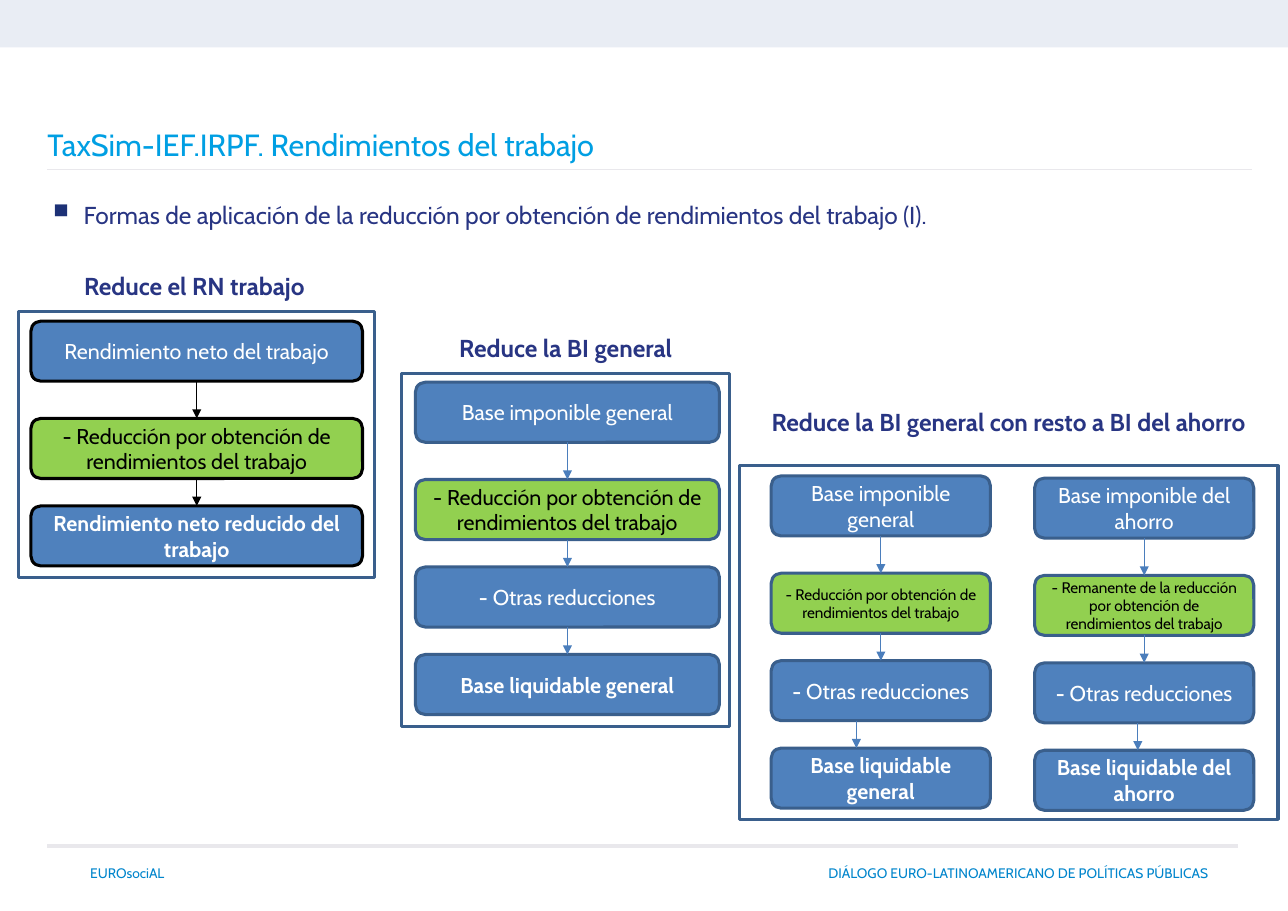
import pptx
import pptx.util
from lxml import etree
from pptx.dml.color import RGBColor
from pptx.enum.shapes import MSO_CONNECTOR, MSO_SHAPE
from pptx.enum.text import MSO_ANCHOR, PP_ALIGN
from pptx.oxml.ns import qn

WIDTH = pptx.util.Inches(11.69)
HEIGHT = pptx.util.Inches(8.27)
FONT = "Cabin"

WHITE = RGBColor(0xFF, 0xFF, 0xFF)
BLACK = RGBColor(0x00, 0x00, 0x00)
PALE = RGBColor(0xE9, 0xED, 0xF4)
GREY = RGBColor(0xE9, 0xE8, 0xEC)
CYAN = RGBColor(0x00, 0x9F, 0xE3)
FOOTER_BLUE = RGBColor(0x00, 0x85, 0xCC)
NAVY = RGBColor(0x28, 0x35, 0x83)
BLUE = RGBColor(0x4F, 0x81, 0xBD)
BORDER = RGBColor(0x3A, 0x5F, 0x8C)
ARROW = RGBColor(0x4B, 0x7E, 0xBC)
GREEN = RGBColor(0x92, 0xD0, 0x50)

# Vertical rhythm of every flow, in percent of the slide height
STEP_HEIGHT = 6.6
STEP_TOPS = (0, 10.68, 20.28, 29.88)

REDUCTION = "- Reducción por obtención de rendimientos del trabajo"
OTHER_REDUCTIONS = [("- ", True), ("Otras reducciones", False)]


def across(percent):
    return round(WIDTH * percent / 100)


def down(percent):
    return round(HEIGHT * percent / 100)


def area(left, top, width, height):
    return across(left), down(top), across(width), down(height)


def write(frame, runs, size, color, align=PP_ALIGN.LEFT):
    """Fill the first paragraph with (text, bold) runs."""
    frame.word_wrap = True
    paragraph = frame.paragraphs[0]
    paragraph.alignment = align
    for text, bold in runs:
        run = paragraph.add_run()
        run.text = text
        run.font.name = FONT
        run.font.size = pptx.util.Pt(size)
        run.font.bold = bold
        run.font.color.rgb = color
    return paragraph


def add_label(slide, place, text, size, color, align, bold=False):
    label = slide.shapes.add_textbox(*area(*place))
    write(label.text_frame, [(text, bold)], size, color, align)
    return label


def add_box(slide, kind, place, fill=None, line=None):
    box = slide.shapes.add_shape(kind, *area(*place))
    box.shadow.inherit = False
    if fill is None:
        box.fill.background()
    else:
        box.fill.solid()
        box.fill.fore_color.rgb = fill
    if line is None:
        box.line.fill.background()
    else:
        box.line.color.rgb = line
        box.line.width = pptx.util.Pt(2)
    return box


def add_line(slide, start, end, color, width):
    line = slide.shapes.add_connector(MSO_CONNECTOR.STRAIGHT, *start, *end)
    line.line.color.rgb = color
    line.line.width = pptx.util.Pt(width)
    etree.SubElement(line._element.spPr, qn("a:effectLst"))
    return line


def add_arrow(slide, upper, lower, color, shift=0):
    """Join two steps; a shifted arrow runs beside the middle."""
    x = upper.left + upper.width // 2 + across(shift)
    arrow = add_line(slide, (x, upper.top + upper.height), (x, lower.top), color, 0.75)
    if not shift:
        arrow.begin_connect(upper, 2)
        arrow.end_connect(lower, 0)
    etree.SubElement(arrow.line._get_or_add_ln(), qn("a:tailEnd"), type="triangle")


def add_flow(slide, left, top, width, steps, border=BORDER, arrow=ARROW,
             green_size=14, last_shift=0):
    """Stack the steps: the second is the green reduction, the last the result."""
    boxes = []
    for index, (step, offset) in enumerate(zip(steps, STEP_TOPS)):
        is_reduction = index == 1
        is_result = index == len(steps) - 1
        box = add_box(slide, MSO_SHAPE.ROUNDED_RECTANGLE,
                      (left, top + offset, width, STEP_HEIGHT),
                      GREEN if is_reduction else BLUE, border)
        box.text_frame.vertical_anchor = MSO_ANCHOR.MIDDLE
        runs = [(step, is_result)] if isinstance(step, str) else step
        write(box.text_frame, runs, green_size if is_reduction else 14,
              BLACK if is_reduction else WHITE, PP_ALIGN.CENTER)
        if boxes:
            add_arrow(slide, boxes[-1], box, arrow, last_shift if is_result else 0)
        boxes.append(box)


def add_panel(slide, heading, heading_place, frame_place):
    add_box(slide, MSO_SHAPE.RECTANGLE, frame_place, line=BORDER)
    add_label(slide, heading_place, heading, 16, NAVY, PP_ALIGN.CENTER, True)


def add_title(slide, text):
    title = slide.shapes.title
    title.left, title.top, title.width, title.height = area(2.82, 12.82, 90, 6.05)
    title.text_frame.vertical_anchor = MSO_ANCHOR.MIDDLE
    write(title.text_frame, [(text, False)], 20, CYAN)
    add_line(slide, (across(3.68), down(18.62)), (across(97.18), down(18.62)), GREY, 1)


def add_bullet(slide, text):
    body = slide.shapes.add_textbox(*area(3.68, 20.44, 92.81, 68.56))
    frame = body.text_frame
    frame.margin_left = frame.margin_right = frame.margin_bottom = 0
    frame.margin_top = pptx.util.Inches(0.13)
    paragraph = write(frame, [(text, False)], 16, NAVY, PP_ALIGN.JUSTIFY)
    properties = paragraph._p.get_or_add_pPr()
    properties.set("marL", str(pptx.util.Inches(0.33)))
    properties.set("indent", str(-pptx.util.Inches(0.38)))
    color = etree.SubElement(properties, qn("a:buClr"))
    etree.SubElement(color, qn("a:srgbClr"), val="1D3176")
    etree.SubElement(properties, qn("a:buSzPct"), val="150000")
    etree.SubElement(properties, qn("a:buChar"), char="▪")


def add_footer(slide):
    add_line(slide, (across(3.68), down(92.87)), (across(96.15), down(92.87)), GREY, 2)
    add_label(slide, (2.82, 94.32, 10.78, 3.02), "EUROsociAL",
              9, FOOTER_BLUE, PP_ALIGN.RIGHT)
    add_label(slide, (63.47, 94.32, 34.39, 3.02),
              "DIÁLOGO EURO-LATINOAMERICANO DE POLÍTICAS PÚBLICAS",
              9, FOOTER_BLUE, PP_ALIGN.LEFT)


def main():
    deck = pptx.Presentation()
    deck.slide_width, deck.slide_height = WIDTH, HEIGHT
    slide = deck.slides.add_slide(deck.slide_layouts[5])

    # Page furniture and heading
    add_box(slide, MSO_SHAPE.RECTANGLE, (0, 0, 100, 5.2), PALE)
    add_footer(slide)
    add_title(slide, "TaxSim-IEF.IRPF. Rendimientos del trabajo")
    add_bullet(slide, "Formas de aplicación de la reducción por obtención "
                      "de rendimientos del trabajo (I).")

    # Reduction of net employment income
    add_panel(slide, "Reduce el RN trabajo",
              (1.28, 29.14, 27.63, 4.47), (1.45, 34.22, 27.63, 29.14))
    add_flow(slide, 2.4, 35.25, 25.75,
             ["Rendimiento neto del trabajo", REDUCTION,
              "Rendimiento neto reducido del trabajo"], BLACK, BLACK)

    # Reduction of the general tax base
    add_panel(slide, "Reduce la BI general",
              (31.31, 35.91, 25.24, 4.47), (31.14, 40.99, 25.49, 38.81))
    add_flow(slide, 32.25, 41.96, 23.61,
             ["Base imponible general", REDUCTION, OTHER_REDUCTIONS,
              "Base liquidable general"])

    # Reduction of the general base, remainder to the savings base
    add_panel(slide, "Reduce la BI general con resto a BI del ahorro",
              (57.4, 44.14, 41.83, 7.74), (57.4, 51.15, 41.83, 38.81))
    add_flow(slide, 59.88, 52.24, 17.02,
             ["Base imponible general", REDUCTION, OTHER_REDUCTIONS,
              "Base liquidable general"], green_size=10, last_shift=-1.9)
    add_flow(slide, 80.33, 52.48, 17.02,
             ["Base imponible del ahorro",
              "- Remanente de la reducción por obtención de rendimientos del trabajo",
              OTHER_REDUCTIONS, "Base liquidable del ahorro"],
             green_size=10, last_shift=-0.5)

    deck.save("out.pptx")


if __name__ == "__main__":
    main()
